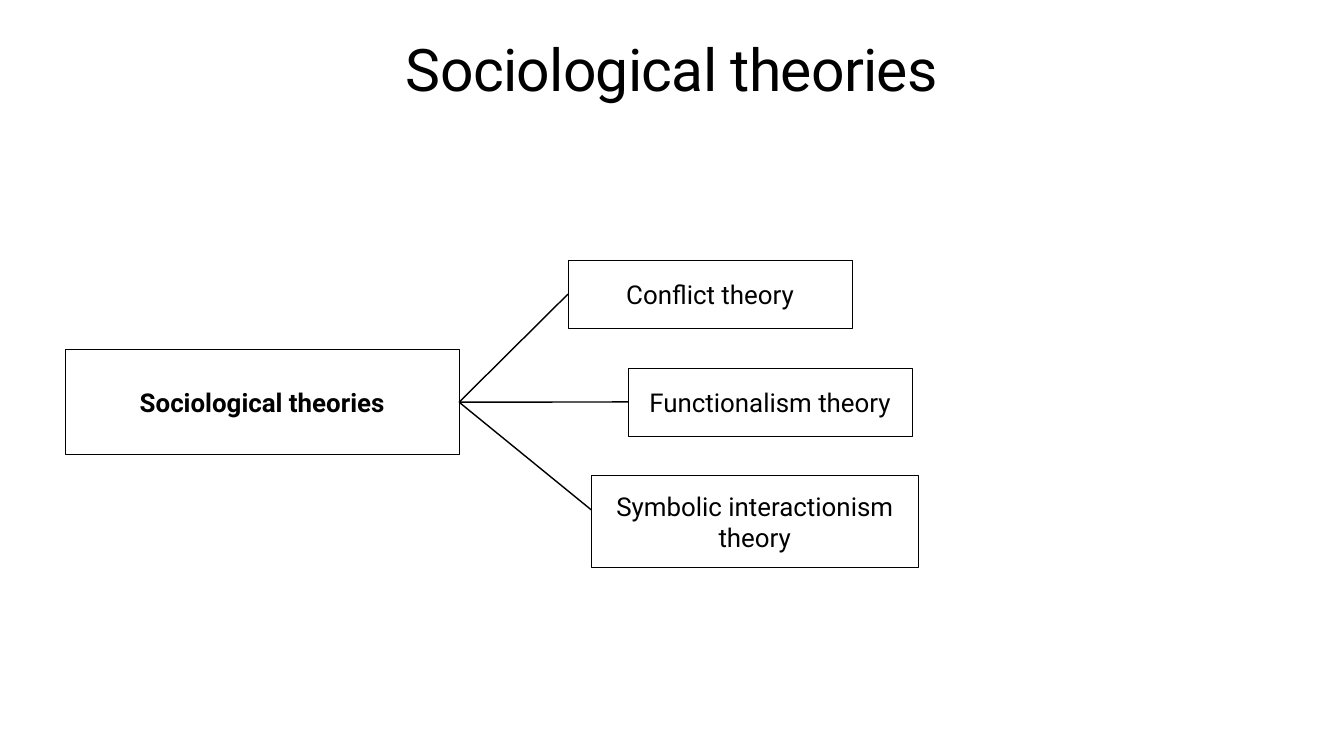
from pptx import Presentation, util as u
from pptx.dml.color import RGBColor
from pptx.enum import shapes, text
from pptx.oxml.ns import qn
from lxml import etree

SLIDE_WIDTH, SLIDE_HEIGHT = u.Inches(26.67), u.Inches(15)
INK, PAPER = "000000", "FFFFFF"
TOP, LEFT_SIDE, RIGHT_SIDE = 0, 1, 3  # connection sites of a rectangle

TITLE_FORMAT = {"name": "Roboto", "size": u.Pt(84), "bold": False}
THEORY_FORMAT = {"name": "Roboto", "size": u.Pt(37), "bold": False}
ROOT_FORMAT = {**THEORY_FORMAT, "bold": True}


def color(value):
    return RGBColor.from_string(value)


def part(box, left, top, width, height):
    """Return a part of a box, given in percent of its width and height."""
    x, y, w, h = box
    return (round(x + w * left / 100), round(y + h * top / 100),
            round(w * width / 100), round(h * height / 100))


def write(shape, words, formats, anchor):
    frame = shape.text_frame
    settings = {"word_wrap": True, "vertical_anchor": anchor}
    settings.update({f"margin_{side}": u.Inches(0.06)
                     for side in ("left", "top", "right", "bottom")})
    for name, value in settings.items():
        setattr(frame, name, value)
    para = frame.paragraphs[0]
    para.alignment = text.PP_ALIGN.CENTER
    span = para.add_run()
    span.text = words
    for name, value in formats.items():
        setattr(span.font, name, value)
    span.font.color.rgb = color(INK)
    return para, span


def add_title(page, box):
    title = page.shapes.add_textbox(*box)
    para, span = write(title, "Sociological theories", TITLE_FORMAT, text.MSO_ANCHOR.TOP)
    para.line_spacing = 0.8
    span._r.get_or_add_rPr().set("spc", "-100")  # tighten letters by 1 pt


def add_node(page, box, words, formats):
    node = page.shapes.add_shape(shapes.MSO_SHAPE.RECTANGLE, *box)
    node.shadow.inherit = False
    node.fill.solid()
    node.fill.fore_color.rgb = color(PAPER)
    node.line.color.rgb = color(INK)
    node.line.width = u.Pt(1)
    write(node, words, formats, text.MSO_ANCHOR.MIDDLE)
    return node


def add_branch(page, root, node, end_y):
    start_x, start_y = root.left + root.width, root.top + root.height // 2
    branch = page.shapes.add_connector(
        shapes.MSO_CONNECTOR.STRAIGHT, start_x, start_y, node.left, end_y)
    branch.line.color.rgb = color(INK)
    branch.line.width = u.Pt(2)
    etree.SubElement(branch._element.spPr, qn("a:effectLst"))
    branch.begin_connect(root, RIGHT_SIDE)
    if abs(end_y - node.top - node.height // 2) < u.Pt(1):
        branch.end_connect(node, LEFT_SIDE)


def add_theory_map(page, box):
    row_step, row_height = 35.14, 22.17
    theories = [  # words, left, width, height
        ("Conflict theory", 58.95, 33.31, row_height),
        ("Functionalism theory", 65.98, 33.31, row_height),
        ("Symbolic interactionism theory", 61.67, 38.33, 29.72),
    ]
    root = add_node(page, part(box, 0, 29.23, 46.19, 34.15),
                    "Sociological theories", ROOT_FORMAT)
    for row, (words, left, width, height) in enumerate(theories):
        top = row * row_step
        node = add_node(page, part(box, left, top, width, height), words, THEORY_FORMAT)
        # Every branch ends half a standard row below the top of its theory
        end_y = part(box, 0, top + row_height / 2, 0, 0)[1]
        add_branch(page, root, node, end_y)


def main():
    deck = Presentation()
    deck.slide_width, deck.slide_height = SLIDE_WIDTH, SLIDE_HEIGHT
    page = deck.slides.add_slide(deck.slide_layouts[6])
    page.background.fill.solid()
    page.background.fill.fore_color.rgb = color(PAPER)
    slide_box = (0, 0, SLIDE_WIDTH, SLIDE_HEIGHT)
    add_title(page, part(slide_box, 5, 5.67, 90, 12.6))
    add_theory_map(page, part(slide_box, 4.84, 34.4, 63.48, 40.6))
    deck.save("out.pptx")


if __name__ == "__main__":
    main()
